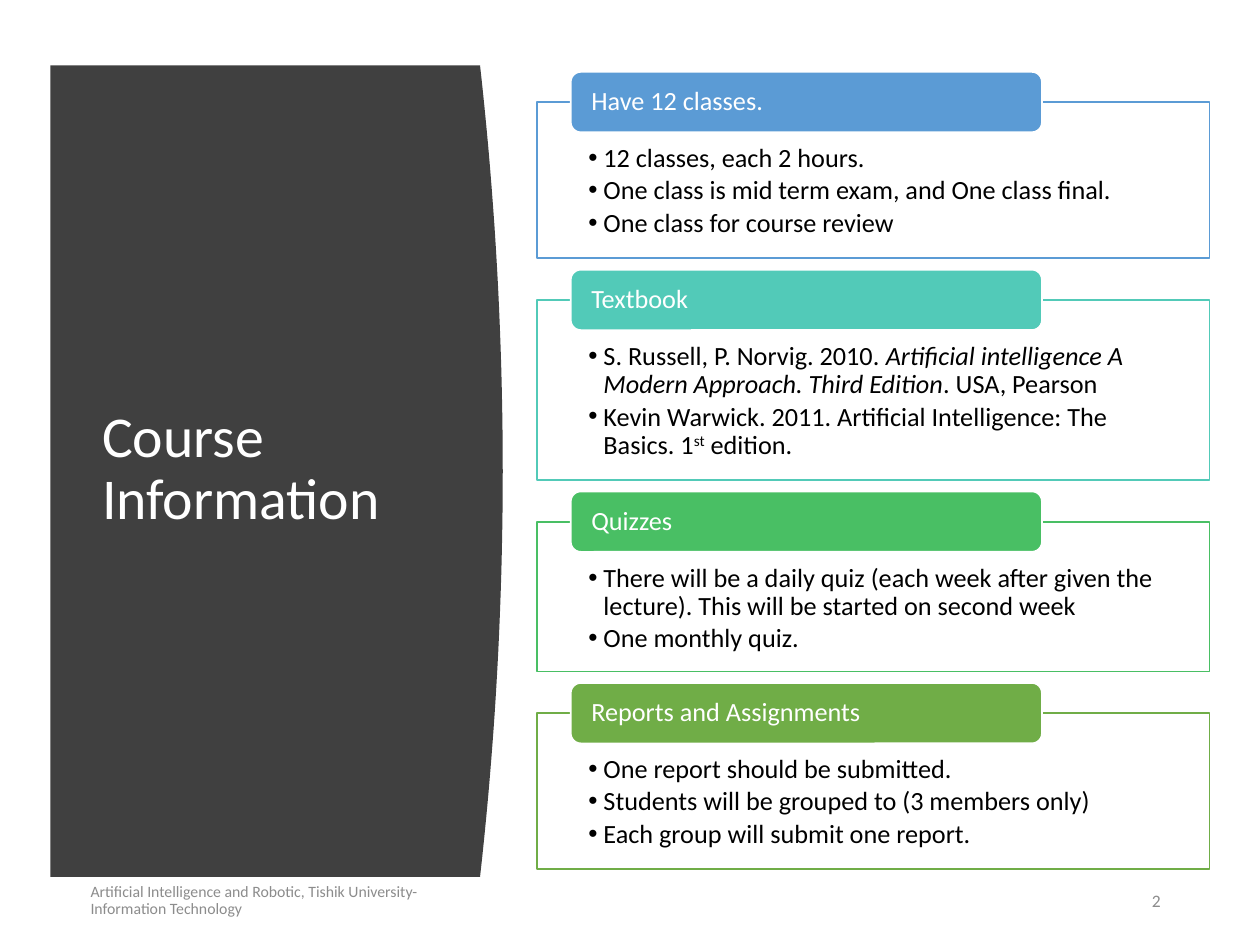
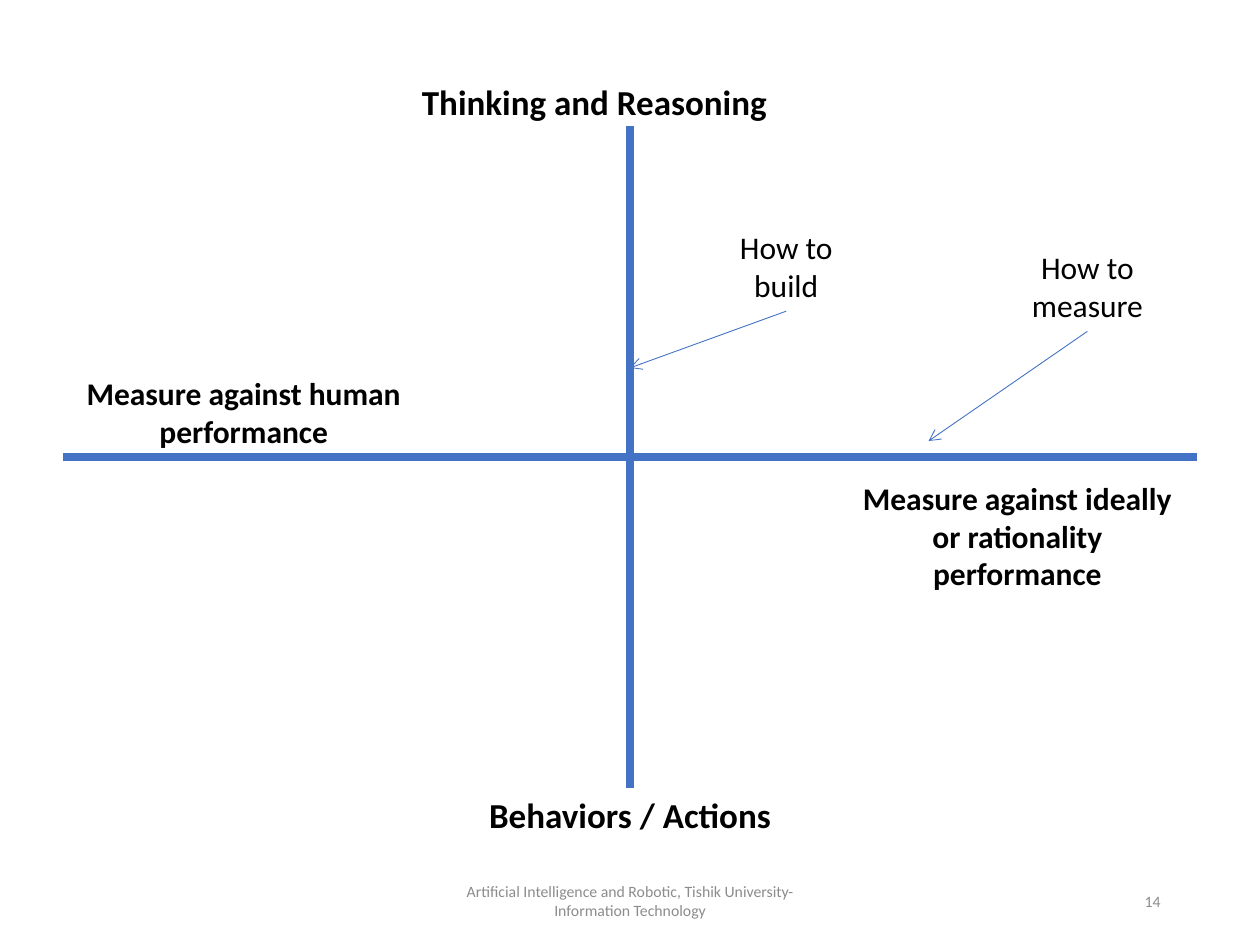
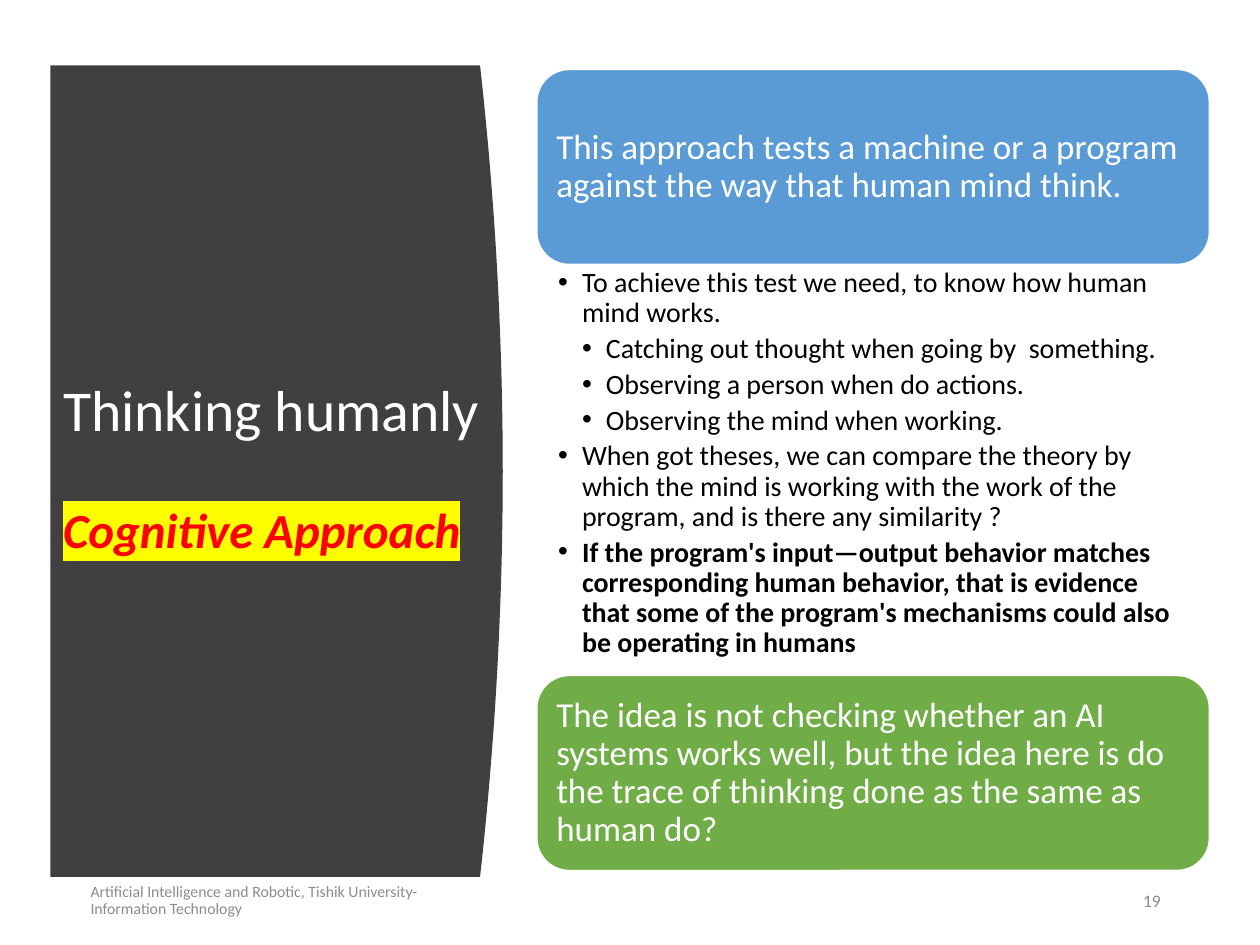
import copy
from dataclasses import dataclass, field
from typing import Any, NamedTuple

import pptx
import pptx.dml.color
import pptx.enum.shapes
import pptx.enum.text
import pptx.oxml.ns
import pptx.shapes.autoshape
import pptx.shapes.connector
import pptx.slide
import pptx.text.text
import pptx.util
from lxml import etree

Inches = pptx.util.Inches
Pt = pptx.util.Pt
qn = pptx.oxml.ns.qn
Align = pptx.enum.text.PP_ALIGN
Anchor = pptx.enum.text.MSO_ANCHOR
AutoSize = pptx.enum.text.MSO_AUTO_SIZE
Preset = pptx.enum.shapes.MSO_SHAPE

FONT = "Calibri"
FOOTER = "Artificial Intelligence and Robotic, Tishik University-Information Technology"
COLOURS = {
    "panel": "404040", "white": "FFFFFF", "black": "000000", "footer": "8C8C8C",
    "blue": "5B9BD5", "teal": "52CAB8", "green": "49BF64", "olive": "70AD47",
    "axis": "4472C4", "red": "FF0000", "yellow": "FFFF00",
}


class Box(NamedTuple):
    left: float
    top: float
    width: float
    height: float

    def emu(self) -> list[int]:
        return [Inches(length) for length in self]


class Run(NamedTuple):
    text: str
    font: dict[str, Any] = {}
    colour: str = ""
    highlight: str = ""
    superscript: bool = False


class Para(NamedTuple):
    runs: list[Run]
    level: int = 0


@dataclass(frozen=True)
class Style:
    size: float
    colour: str = "black"
    font: dict[str, Any] = field(default_factory=dict)
    paragraph: dict[str, Any] = field(default_factory=dict)
    frame: dict[str, Any] = field(default_factory=dict)
    hanging: float = 0


class Card(NamedTuple):
    heading: str
    colour: str
    height: float
    points: list[Para]


class Label(NamedTuple):
    text: str
    box: Box
    style: Style


def margins(left: float, top: float, right: float, bottom: float) -> dict[str, Any]:
    sides = {"left": left, "top": top, "right": right, "bottom": bottom}
    return {f"margin_{side}": Inches(size) for side, size in sides.items()}


TIGHT = {"line_spacing": 0.9, "alignment": Align.LEFT}
MIDDLE = {"vertical_anchor": Anchor.MIDDLE}
GROW = {"auto_size": AutoSize.SHAPE_TO_FIT_TEXT}
CENTRED = {"alignment": Align.CENTER}

TITLE = Style(33, "white", paragraph=TIGHT, frame=MIDDLE | {"auto_size": AutoSize.NONE})
FOOTER_LEFT = Style(9, "footer", paragraph=TIGHT, frame=MIDDLE)
FOOTER_CENTRED = Style(9, "footer", paragraph=CENTRED, frame=MIDDLE)
CARD_HEADING = Style(15, "white", paragraph=TIGHT, frame=MIDDLE | margins(0.14, 0, 0.14, 0))
CARD_POINTS = Style(15, paragraph=TIGHT | {"space_after": Pt(2.25)},
                    frame=margins(0.41, 0.34, 0.41, 0.12) | {"vertical_anchor": Anchor.TOP},
                    hanging=0.12)
STATEMENT = Style(20, "white", paragraph=TIGHT, frame=MIDDLE | margins(0.08, 0.08, 0.08, 0.08))
EXPLANATION = Style(16, paragraph=TIGHT | {"space_after": Pt(3.2)},
                    frame=margins(0.17, 0.03, 0.16, 0.03), hanging=0.19)
AXIS_TOP = Style(20, font={"bold": True}, frame=GROW)
AXIS_BOTTOM = Style(20, font={"bold": True}, paragraph=CENTRED, frame=GROW)
AXIS_SIDE = Style(18, font={"bold": True}, paragraph=CENTRED, frame=GROW)
CALLOUT = Style(18, paragraph=CENTRED, frame=GROW)


def rgb(colour: str) -> pptx.dml.color.RGBColor:
    return pptx.dml.color.RGBColor.from_string(COLOURS[colour])


def apply(target: Any, values: dict[str, Any]) -> None:
    for name, value in values.items():
        setattr(target, name, value)


def plain(*texts: str, level: int = 0) -> list[Para]:
    return [Para([Run(text)], level) for text in texts]


def add_bullet(paragraph: Any, level: int, hanging: float) -> None:
    paragraph.level = level
    properties = paragraph._p.get_or_add_pPr()
    properties.set("marL", str(Inches(hanging * (level + 1))))
    properties.set("indent", str(-Inches(hanging)))
    etree.SubElement(properties, qn("a:buFont")).set("typeface", "Arial")
    etree.SubElement(properties, qn("a:buChar")).set("char", "•")


def add_run(paragraph: Any, content: Run, style: Style) -> None:
    for index, piece in enumerate(content.text.split("\n")):
        if index:
            paragraph.add_line_break()
        if not piece:
            continue
        run = paragraph.add_run()
        run.text = piece
        apply(run.font, {"name": FONT, "size": Pt(style.size)} | style.font | content.font)
        run.font.color.rgb = rgb(content.colour or style.colour)
        properties = run._r.get_or_add_rPr()
        if content.superscript:
            properties.set("baseline", "30000")
        if content.highlight:
            marker = etree.Element(qn("a:highlight"))
            etree.SubElement(marker, qn("a:srgbClr")).set("val", COLOURS[content.highlight])
            properties.find(qn("a:solidFill")).addnext(marker)


def write(frame: pptx.text.text.TextFrame, paras: list[Para], style: Style) -> None:
    frame.word_wrap = True
    apply(frame, style.frame)
    for index, para in enumerate(paras):
        paragraph = frame.add_paragraph() if index else frame.paragraphs[0]
        if style.hanging:
            add_bullet(paragraph, para.level, style.hanging)
        apply(paragraph, {"alignment": Align.LEFT} | style.paragraph)
        for content in para.runs:
            add_run(paragraph, content, style)
        for line_break in paragraph._p.findall(qn("a:br")):
            line_break.insert(0, copy.deepcopy(paragraph.runs[0]._r.rPr))


def add_text(slide: pptx.slide.Slide, box: Box, paras: list[Para],
             style: Style) -> pptx.shapes.autoshape.Shape:
    text = slide.shapes.add_textbox(*box.emu())
    write(text.text_frame, paras, style)
    return text


def add_block(slide: pptx.slide.Slide, preset: Any, box: Box, fill: str, outline: str,
              paras: list[Para], style: Style) -> pptx.shapes.autoshape.Shape:
    block = slide.shapes.add_shape(preset, *box.emu())
    block.shadow.inherit = False
    block.fill.solid()
    block.fill.fore_color.rgb = rgb(fill)
    block.line.color.rgb = rgb(outline)
    block.line.width = Pt(1)
    write(block.text_frame, paras, style)
    return block


def add_line(slide: pptx.slide.Slide, start: tuple[float, float], end: tuple[float, float],
             width: float, arrow: bool = False) -> pptx.shapes.connector.Connector:
    line = slide.shapes.add_connector(
        pptx.enum.shapes.MSO_CONNECTOR.STRAIGHT, *map(Inches, start + end))
    line.line.color.rgb = rgb("axis")
    line.line.width = Pt(width)
    properties = line.element.spPr
    if arrow:
        etree.SubElement(properties.find(qn("a:ln")), qn("a:tailEnd")).set("type", "arrow")
    etree.SubElement(properties, qn("a:effectLst"))
    return line


def add_panel(slide: pptx.slide.Slide) -> None:
    """Draw the dark title panel, whose right edge bulges as a parabola."""
    left, top, bottom, corner, bulge, steps = 0.4, 0.52, 6.96, 3.81, 0.18, 40
    edge = []
    for step in range(steps + 1):
        offset = 2 * step / steps - 1
        edge.append((Inches(corner + bulge * (1 - offset ** 2)),
                     Inches(top + (bottom - top) * step / steps)))
    outline = slide.shapes.build_freeform(Inches(left), Inches(top))
    outline.add_line_segments(edge + [(Inches(left), Inches(bottom))], close=True)
    panel = outline.convert_to_shape()
    panel.shadow.inherit = False
    panel.fill.solid()
    panel.fill.fore_color.rgb = rgb("panel")
    panel.line.fill.background()
    # The title is drawn over the panel.
    slide.shapes.title.element.addprevious(panel.element)


def add_footer(slide: pptx.slide.Slide, left: float, style: Style, number: int,
               number_size: float) -> None:
    add_text(slide, Box(left, 6.95, 3.38, 0.4), plain(FOOTER), style)
    number_style = Style(number_size, "footer", paragraph={"alignment": Align.RIGHT}, frame=MIDDLE)
    add_text(slide, Box(8.8, 6.95, 0.51, 0.4), plain(str(number)), number_style)


def add_panel_slide(deck: Any, title: list[Para], title_box: Box, number: int) -> pptx.slide.Slide:
    slide = deck.slides.add_slide(deck.slide_layouts.get_by_name("Title Only"))
    add_panel(slide)
    heading = slide.shapes.title
    apply(heading, dict(zip(("left", "top", "width", "height"), title_box.emu())))
    write(heading.text_frame, title, TITLE)
    add_footer(slide, 0.62, FOOTER_LEFT, number, 10)
    return slide


CARDS = [
    Card("Have 12 classes.", "blue", 1.24, plain(
        "12 classes, each 2 hours.",
        "One class is mid term exam, and One class final.",
        "One class for course review")),
    Card("Textbook", "teal", 1.43, [
        Para([Run("S. Russell, P. Norvig. 2010. "),
              Run("Artificial intelligence A Modern Approach. Third Edition", {"italic": True}),
              Run(". USA, Pearson")]),
        Para([Run("Kevin Warwick. 2011. Artificial Intelligence: The Basics. 1"),
              Run("st", superscript=True), Run(" edition.")])]),
    Card("Quizzes", "green", 1.19, plain(
        "There will be a daily quiz (each week after given the lecture). "
        "This will be started on second week",
        "One monthly quiz.")),
    Card("Reports and Assignments", "olive", 1.24, plain(
        "One report should be submitted.",
        "Students will be grouped to (3 members only)",
        "Each group will submit one report.")),
]


def build_course_information(deck: Any) -> None:
    slide = add_panel_slide(deck, plain("Course Information"), Box(0.71, 1.11, 2.8, 5.24), 2)
    top, gap, tab_height = 0.81, 0.33, 0.48
    for card in CARDS:
        body = add_block(slide, Preset.RECTANGLE, Box(4.26, top, 5.34, card.height),
                         "white", card.colour, card.points, CARD_POINTS)
        white = body.element.spPr.find(qn("a:solidFill")).find(qn("a:srgbClr"))
        etree.SubElement(white, qn("a:alpha")).set("val", "90000")
        add_block(slide, Preset.ROUNDED_RECTANGLE,
                  Box(4.53, top - tab_height / 2, 3.74, tab_height),
                  card.colour, "white", plain(card.heading), CARD_HEADING)
        top += card.height + gap


AXIS_LABELS = [
    Label("Thinking and Reasoning", Box(3.25, 0.59, 3.45, 0.44), AXIS_TOP),
    Label("Measure against human performance", Box(0.5, 2.92, 2.87, 0.71), AXIS_SIDE),
    Label("Measure against ideally or rationality performance",
          Box(6.64, 3.75, 2.87, 1.01), AXIS_SIDE),
]
CALLOUTS = [
    (Label("How to measure", Box(7.92, 1.92, 1.42, 0.71), CALLOUT), (7.37, 3.5)),
    (Label("How to build", Box(5.53, 1.76, 1.42, 0.71), CALLOUT), (5, 2.92)),
]


def build_axes(deck: Any) -> None:
    slide = deck.slides.add_slide(deck.slide_layouts.get_by_name("Blank"))
    add_footer(slide, 3.31, FOOTER_CENTRED, 14, 9)
    thinking_to_behaviour = add_line(slide, (5, 1), (5, 6.25), 4.5)
    add_line(slide, (0.5, 3.63), (9.5, 3.63), 4.5)
    behaviour = add_text(slide, Box(3.54, 6.25, 2.92, 0.44), plain("Behaviors / Actions"),
                         AXIS_BOTTOM)
    thinking_to_behaviour.end_connect(behaviour, 0)
    for label in AXIS_LABELS:
        add_text(slide, label.box, plain(label.text), label.style)
    for label, target in CALLOUTS:
        question = add_text(slide, label.box, plain(label.text), label.style)
        start = (label.box.left + label.box.width / 2, label.box.top + label.box.height)
        add_line(slide, start, target, 0.5, arrow=True).begin_connect(question, 2)


STATEMENTS = [
    (0.55, "blue", "This approach tests a machine or a program against the way that human "
                   "mind think."),
    (5.36, "olive", "The idea is not checking whether an AI systems works well, but the idea "
                    "here is do the trace of thinking done as the same as human do?"),
]
HUMAN_MIND = [
    *plain("To achieve this test we need, to know how human mind works."),
    *plain("Catching out thought when going by  something.",
           "Observing a person when do actions.",
           "Observing the mind when working.", level=1),
    *plain("When got theses, we can compare the theory by which the mind is working with the "
           "work of the program, and is there any similarity ?"),
    Para([Run("If the program's input—output behavior matches corresponding human behavior, "
              "that is evidence that some of the program's mechanisms could also be operating "
              "in humans", {"bold": True})]),
]


def build_thinking_humanly(deck: Any) -> None:
    approach = Run("Cognitive Approach", {"size": Pt(28), "bold": True, "italic": True},
                   "red", "yellow")
    title = [Para([Run("Thinking humanly\n\n"), approach])]
    slide = add_panel_slide(deck, title, Box(0.4, 1.11, 3.59, 5.24), 19)
    for top, colour, statement in STATEMENTS:
        add_block(slide, Preset.ROUNDED_RECTANGLE, Box(4.26, top, 5.34, 1.55),
                  colour, "white", plain(statement), STATEMENT)
    add_text(slide, Box(4.26, 2.1, 5.34, 3.26), HUMAN_MIND, EXPLANATION)


def main() -> None:
    deck = pptx.Presentation()
    deck.slide_width, deck.slide_height = Inches(10), Inches(7.5)
    build_course_information(deck)
    build_axes(deck)
    build_thinking_humanly(deck)
    deck.save("out.pptx")


if __name__ == "__main__":
    main()
